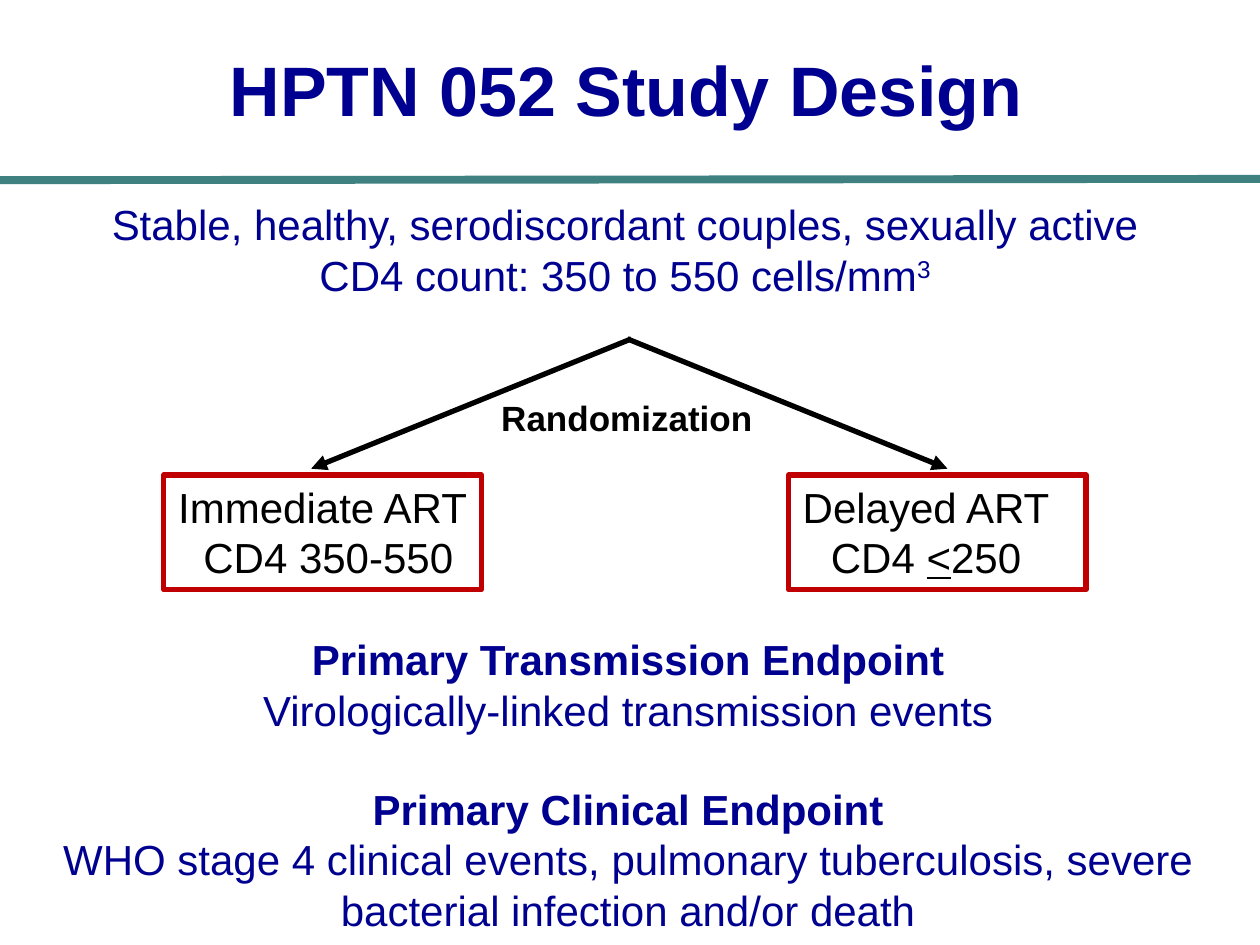
import pptx
import pptx.util
import pptx.dml.color
import pptx.enum.shapes
import pptx.enum.text
import pptx.oxml.ns
import lxml.etree

Inches, Pt = pptx.util.Inches, pptx.util.Pt
RGB = pptx.dml.color.RGBColor.from_string
LINE = pptx.enum.shapes.MSO_CONNECTOR.STRAIGHT
ANCHOR = pptx.enum.text.MSO_ANCHOR
THEME = {
    "font": "Arial", "navy": RGB("000090"), "black": RGB("000000"),
    "teal": RGB("3F8080"), "red": RGB("C00000"),
    "title": Pt(40), "body": Pt(24), "label": Pt(20),
}


def write(shape, paragraphs, color, size, anchor=ANCHOR.TOP, inset=0.1):
    frame = shape.text_frame
    layout = {"word_wrap": True, "vertical_anchor": anchor,
              "auto_size": pptx.enum.text.MSO_AUTO_SIZE.NONE,
              "margin_left": Inches(inset), "margin_right": Inches(inset),
              "margin_top": Inches(0.05), "margin_bottom": Inches(0.05)}
    for name, value in layout.items():
        setattr(frame, name, value)
    for index, (runs, spacing) in enumerate(paragraphs):
        paragraph = frame.add_paragraph() if index else frame.paragraphs[0]
        paragraph.alignment = pptx.enum.text.PP_ALIGN.CENTER
        for name, value in spacing.items():
            if name == "space_before":
                paragraph.space_before = value
            else:
                paragraph._p.get_or_add_pPr().set(name, str(value))
        for text, style in runs:
            run = paragraph.add_run()
            run.text = text
            run.font.color.rgb = color
            base = {"name": THEME["font"], "size": size, "bold": False}
            for name, value in {**base, **style}.items():
                if name == "baseline":
                    run._r.get_or_add_rPr().set(name, value)
                else:
                    setattr(run.font, name, value)


def draw_line(start, end, color, width, arrow=False):
    line = slide.shapes.add_connector(LINE, *map(Inches, start + end))
    line.line.color.rgb = color
    line.line.width = Pt(width)
    if arrow:
        head = lxml.etree.SubElement(line.line._get_or_add_ln(), pptx.oxml.ns.qn("a:tailEnd"))
        head.set("type", "triangle")
    lxml.etree.SubElement(line._element.spPr, pptx.oxml.ns.qn("a:effectLst"))


deck = pptx.Presentation()
deck.slide_width, deck.slide_height = Inches(10), Inches(7.5)
slide = deck.slides.add_slide(deck.slide_layouts[5])

title = slide.shapes.title
for name, value in {"left": -0.03, "top": 0, "width": 10, "height": 1.41}.items():
    setattr(title, name, Inches(value))
write(title, [([("HPTN 052 Study Design", {"bold": True})], {})],
      THEME["navy"], THEME["title"], ANCHOR.MIDDLE)

draw_line((0, 1.43), (10, 1.42), THEME["teal"], 4.5)

bold = {"bold": True}
population = [
    ([("Stable, healthy, serodiscordant couples, sexually active", {})], {}),
    ([("CD4 count: 350 to 550 cells/mm", {}), ("3", {"baseline": "30000"})], {}),
]
endpoints = [
    ([("Primary Transmission Endpoint", bold)], {}),
    ([("Virologically-linked transmission events", {})], {}),
    ([("Primary Clinical Endpoint", bold)], {"space_before": Pt(28)}),
    ([("WHO stage 4 clinical events, pulmonary tuberculosis, severe "
       "bacterial infection and/or death", {})], {}),
]
randomization = [([("Randomization", bold)], {})]
for bounds, paragraphs, color, size in [
    ((0.75, 1.53, 8.42, 0.91), population, THEME["navy"], THEME["body"]),
    ((0, 4.98, 9.97, 2.52), endpoints, THEME["navy"], THEME["body"]),
    ((3.87, 3.1, 2.21, 0.44), randomization, THEME["black"], THEME["label"]),
]:
    passage = slide.shapes.add_textbox(*map(Inches, bounds))
    write(passage, paragraphs, color, size)

immediate = [
    ([("Immediate ART", {})], {}),
    ([("CD4 350-550", {})], {"marL": Inches(0.09)}),
]
delayed = [
    ([("Delayed ART", {})], {"marR": Inches(0.18)}),
    ([("CD4 ", {}), ("<", {"underline": True}), ("250", {})], {}),
]
for left, width, paragraphs, fork_x, tip_x in [
    (1.3, 2.52, immediate, 5.01, 2.47),
    (6.26, 2.36, delayed, 4.98, 7.52),
]:
    arm = slide.shapes.add_shape(pptx.enum.shapes.MSO_SHAPE.RECTANGLE,
                                 Inches(left), Inches(3.77), Inches(width), Inches(0.91))
    arm.shadow.inherit = False
    arm.fill.background()
    arm.line.color.rgb = THEME["red"]
    arm.line.width = Pt(3)
    write(arm, paragraphs, THEME["black"], THEME["body"], inset=0.05)
    draw_line((fork_x, 2.69), (tip_x, 3.72), THEME["black"], 3, arrow=True)

deck.save("out.pptx")
